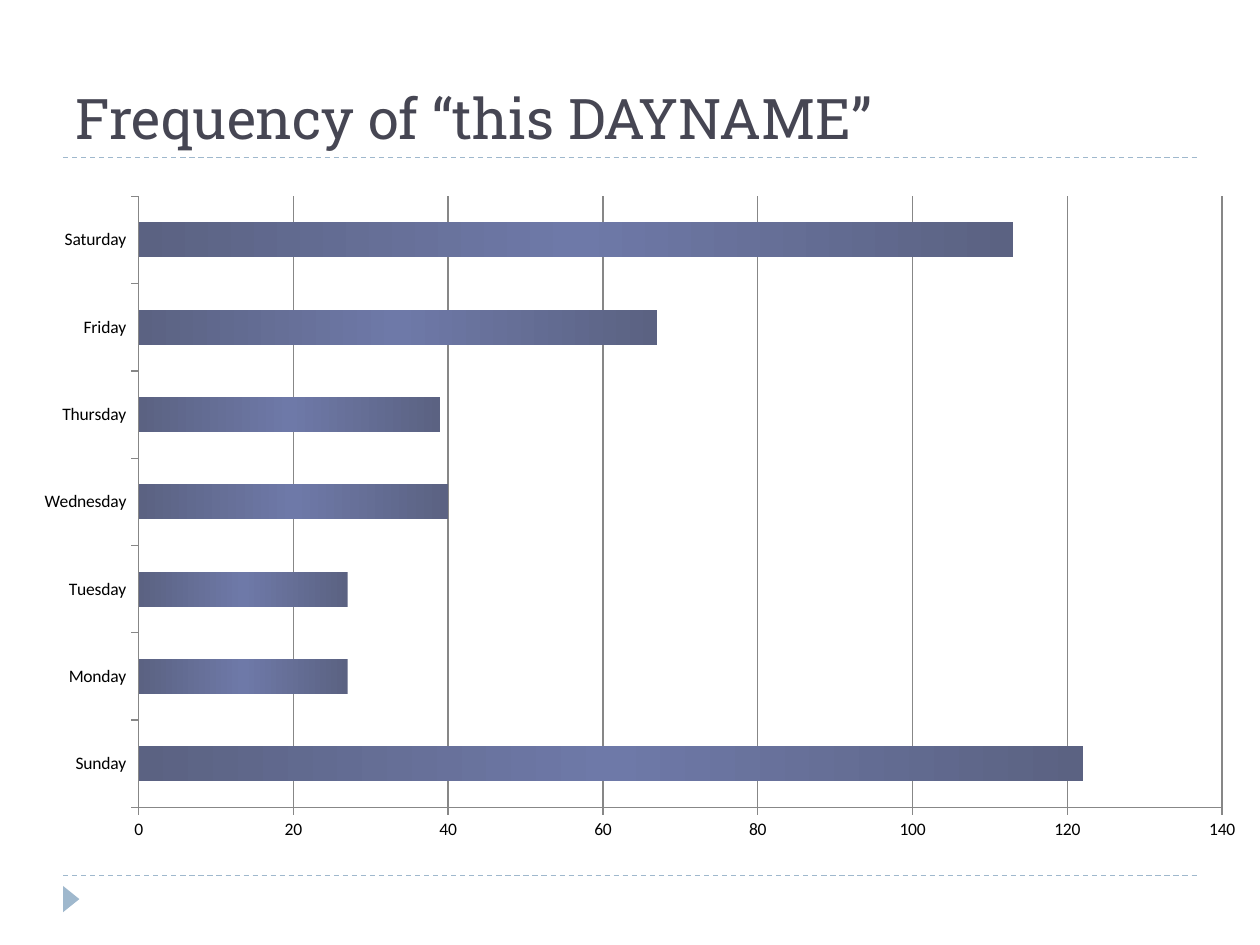
from dataclasses import dataclass

import pptx
import pptx.chart.data
import pptx.dml.color
import pptx.enum.chart
import pptx.enum.dml
import pptx.enum.shapes
import pptx.enum.text
import pptx.oxml
import pptx.oxml.ns
import pptx.util
from pptx.util import Cm


@dataclass(frozen=True)
class Theme:
    title: str = "464653"
    accent: str = "9FB8CD"
    bar_edge: str = "5B6282"
    bar_middle: str = "6E79A8"
    axis: str = "878787"
    label: str = "000000"
    title_font: str = "Roboto Slab"
    label_font: str = "Calibri"
    title_size: int = 32
    label_size: int = 10


THEME = Theme()
FREQUENCIES = {
    "Sunday": 122, "Monday": 27, "Tuesday": 27, "Wednesday": 40,
    "Thursday": 39, "Friday": 67, "Saturday": 113,
}


def rgb(value):
    return pptx.dml.color.RGBColor.from_string(value)


def style_font(font, name, size, color):
    font.name = name
    font.size = pptx.util.Pt(size)
    font.color.rgb = rgb(color)


def add_rule(slide, left, top, width):
    """Dashed horizontal rule."""
    rule = slide.shapes.add_connector(
        pptx.enum.shapes.MSO_CONNECTOR.STRAIGHT, left, top, left + width, top)
    rule.line.color.rgb = rgb(THEME.accent)
    rule.line.width = pptx.util.Pt(0.75)
    rule.line.dash_style = pptx.enum.dml.MSO_LINE.DASH
    properties = rule._element.spPr
    properties.append(pptx.oxml.parse_xml(
        f'<a:effectLst {pptx.oxml.ns.nsdecls("a")}/>'))


def add_title(slide, left, top, width, height):
    """Title resting on a rule."""
    add_rule(slide, left, top + height, width)
    box = slide.shapes.add_textbox(left, top, width, height)
    frame = box.text_frame
    frame.word_wrap = True
    frame.vertical_anchor = pptx.enum.text.MSO_ANCHOR.BOTTOM
    frame.text = "Frequency of “this DAYNAME”"
    style_font(frame.paragraphs[0].runs[0].font,
               THEME.title_font, THEME.title_size, THEME.title)


def add_footer(slide, left, top, width):
    """Rule with a right-pointing marker below its left end."""
    add_rule(slide, left, top, width)
    base, depth = Cm(0.53), Cm(0.33)
    # The quarter turn swaps width and height about the centre
    marker = slide.shapes.add_shape(
        pptx.enum.shapes.MSO_SHAPE.ISOSCELES_TRIANGLE,
        left - (base - depth) // 2, top + Cm(0.31), base, depth)
    marker.rotation = 90
    marker.shadow.inherit = False
    marker.fill.solid()
    marker.fill.fore_color.rgb = rgb(THEME.accent)
    marker.line.fill.background()


def fill_bars(series):
    """Gradient that is lighter in the middle of each bar."""
    colors = ((0, THEME.bar_edge), (50, THEME.bar_middle), (100, THEME.bar_edge))
    stops = "".join(
        f'<a:gs pos="{position * 1000}"><a:srgbClr val="{color}"/></a:gs>'
        for position, color in colors)
    properties = series.format.fill._xPr
    properties.insert(0, pptx.oxml.parse_xml(
        f'<a:gradFill {pptx.oxml.ns.nsdecls("a")} rotWithShape="1">'
        f'<a:gsLst>{stops}</a:gsLst><a:lin ang="0" scaled="0"/></a:gradFill>'))


def set_plot_area(chart, x, y, w, h):
    """Fix the inner plot area as fractions of the chart."""
    plot_area = chart._chartSpace.chart.plotArea
    for layout in plot_area.findall(pptx.oxml.ns.qn("c:layout")):
        plot_area.remove(layout)
    values = "".join(f'<c:{key} val="{value}"/>'
                     for key, value in (("x", x), ("y", y), ("w", w), ("h", h)))
    plot_area.insert(0, pptx.oxml.parse_xml(
        f'<c:layout {pptx.oxml.ns.nsdecls("c")}><c:manualLayout>'
        '<c:layoutTarget val="inner"/><c:xMode val="edge"/><c:yMode val="edge"/>'
        f'{values}</c:manualLayout></c:layout>'))


def add_frequency_chart(slide, left, top, width, height):
    """Bar chart with one bar for each weekday."""
    data = pptx.chart.data.CategoryChartData()
    data.categories = list(FREQUENCIES)
    data.add_series("Series 1", list(FREQUENCIES.values()))
    chart = slide.shapes.add_chart(
        pptx.enum.chart.XL_CHART_TYPE.BAR_CLUSTERED,
        left, top, width, height, data).chart
    chart.has_title = False
    chart.has_legend = False
    style_font(chart.font, THEME.label_font, THEME.label_size, THEME.label)
    set_plot_area(chart, 0.11, 0.04, 0.86, 0.81)

    plot = chart.plots[0]
    plot.gap_width = 150
    plot.vary_by_categories = False
    fill_bars(plot.series[0])

    # Axes and gridlines
    value_axis = chart.value_axis
    value_axis.minimum_scale, value_axis.maximum_scale = 0, 140
    value_axis.major_unit = 20
    value_axis.has_major_gridlines = True
    for axis in (chart.category_axis, value_axis):
        axis.major_tick_mark = pptx.enum.chart.XL_TICK_MARK.OUTSIDE
    for part in (chart.category_axis, value_axis, value_axis.major_gridlines):
        part.format.line.color.rgb = rgb(THEME.axis)
        part.format.line.width = pptx.util.Pt(0.75)


def main():
    presentation = pptx.Presentation()
    presentation.slide_width, presentation.slide_height = Cm(25.4), Cm(19.05)
    slide = presentation.slides.add_slide(presentation.slide_layouts[6])
    margin = Cm(1.27)
    content_width = presentation.slide_width - 2 * margin
    add_title(slide, margin, Cm(0.43), content_width, Cm(2.74))
    add_footer(slide, margin, Cm(17.65), content_width)
    add_frequency_chart(slide, 0, Cm(3.35), presentation.slide_width, Cm(15.21))
    presentation.save("out.pptx")


if __name__ == "__main__":
    main()
